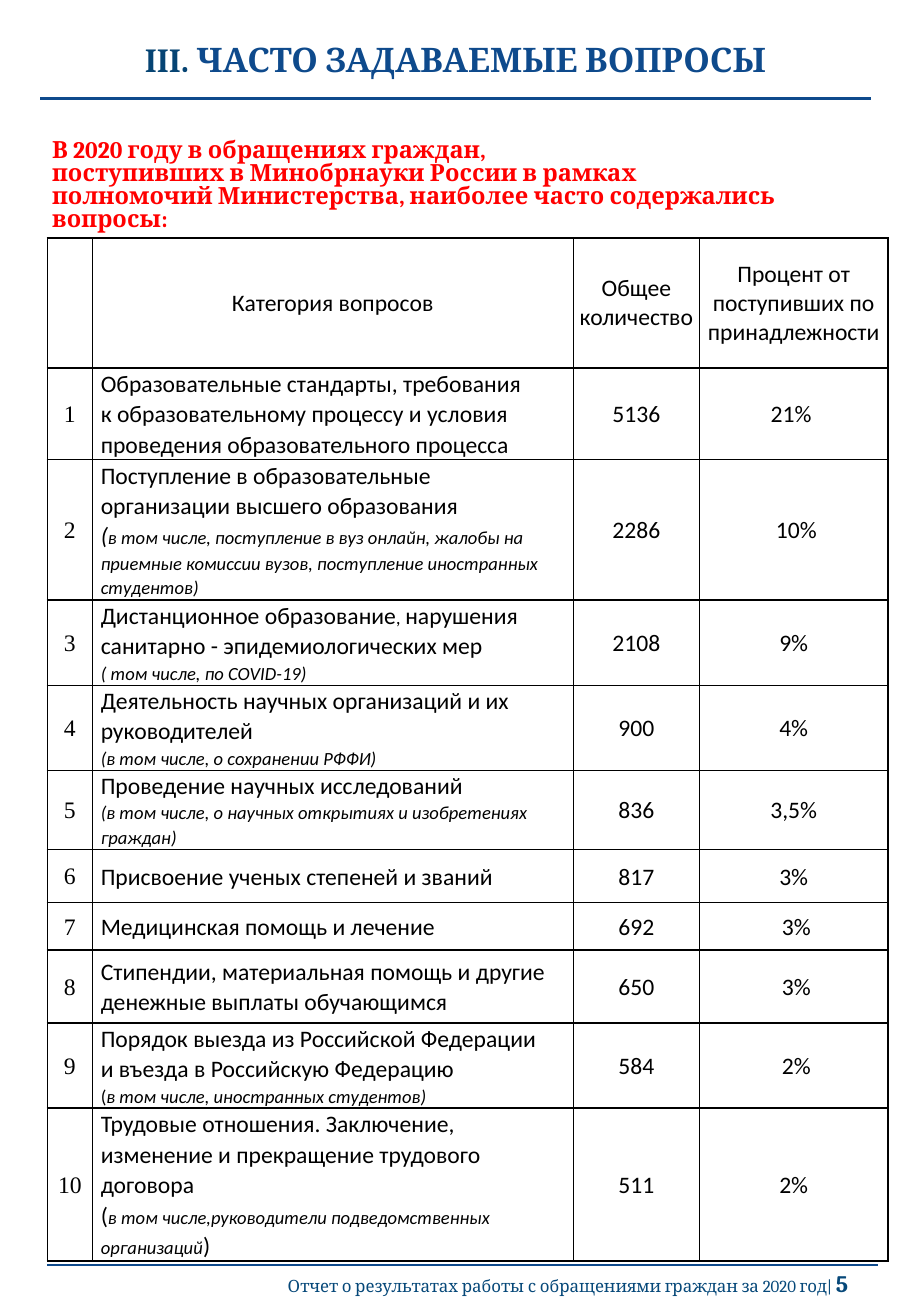
import copy

import pptx
import pptx.util
import pptx.dml.color
import pptx.enum.shapes
import pptx.enum.text
import pptx.oxml
import pptx.oxml.ns

Inches, Pt = pptx.util.Inches, pptx.util.Pt
ALIGN = pptx.enum.text.PP_ALIGN
MIDDLE = pptx.enum.text.MSO_ANCHOR.MIDDLE

BLUE, NAVY, FOOTER_BLUE = "0E4A8C", "064473", "064879"
RED, BLACK = "FF0000", "000000"

BODY = dict(size=14, font="Calibri", color=BLACK)
NUMBER = dict(BODY, font="Times New Roman")
ITALIC = dict(BODY, italic=True)
SMALL = dict(BODY, size=11)
NOTE = dict(SMALL, italic=True)
TITLE = dict(size=20, font="Cambria", bold=True)
INTRO = dict(size=14, font="Cambria", color=RED, bold=True)
FOOTER = dict(font="Cambria", color=FOOTER_BLUE)

# Each text is a list of paragraphs, each paragraph a list of (text, format) runs
TITLE_TEXT = [[("III. ", dict(TITLE, color=NAVY)),
               ("ЧАСТО ЗАДАВАЕМЫЕ ВОПРОСЫ", dict(TITLE, color=BLUE))]]
INTRO_TEXT = [
    [("В 2020 году в обращениях граждан,", INTRO)],
    [("поступивших в Минобрнауки России в рамках полномочий Министерства, "
      "наиболее часто содержались вопросы:", INTRO)],
]
FOOTER_TEXT = [[("Отчет о результатах работы с обращениями граждан за 2020 год| ",
                 dict(FOOTER, size=10)),
                ("5", dict(FOOTER, size=14, bold=True))]]

HEADER = ["", "Категория вопросов", "Общее количество",
          "Процент от поступивших по принадлежности"]
QUESTIONS = [
    ([[("Образовательные стандарты, требования \nк образовательному процессу "
        "и условия проведения образовательного процесса", BODY)]], "5136", "21% "),
    ([[("Поступление в образовательные организации высшего образования", BODY)],
      [("(", ITALIC),
       ("в том числе, поступление в вуз онлайн, жалобы на приемные комиссии вузов, "
        "поступление иностранных студентов)", NOTE)]], "2286", " 10%"),
    ([[("Дистанционное образование", BODY), (", ", NOTE),
       ("нарушения санитарно - эпидемиологических мер \n", BODY),
       ("( том числе, по COVID-19)", NOTE)]], "2108", "9%"),
    ([[("Деятельность научных организаций и их руководителей\n", BODY),
       ("(в том числе, о сохранении РФФИ)", NOTE)]], "900", "4%"),
    ([[("Проведение научных исследований\n", BODY),
       ("(в том числе, о научных открытиях и изобретениях граждан)", NOTE)]],
     "836", "3,5%"),
    ([[("Присвоение ученых степеней и званий", BODY)]], "817", "3%"),
    ([[("Медицинская помощь и лечение", BODY)]], "692", " 3%"),
    ([[("Стипендии, материальная помощь и другие денежные выплаты обучающимся", BODY)]],
     "650", " 3%"),
    ([[("Порядок выезда из Российской Федерации \nи въезда в Российскую Федерацию", BODY)],
      [("(", SMALL), ("в том числе, иностранных студентов)", NOTE)]], "584", " 2%"),
    ([[("Трудовые отношения. Заключение, изменение и прекращение трудового договора", BODY)],
      [("(", BODY), ("в том числе,руководители подведомственных организаций", NOTE),
       (")", BODY)]], "511", "2%"),
]
COL_WIDTHS = [0.37, 3.96, 1.04, 1.55]
ROW_HEIGHTS = [1.07, 0.75, 1.16, 0.7, 0.7, 0.65, 0.44, 0.39, 0.6, 0.7, 1.26]


def rgb(color):
    return pptx.dml.color.RGBColor.from_string(color)


def add_run(p, text, size, font, color, bold=False, italic=False):
    """Add text to a paragraph; line breaks take the format of the run before."""
    for i, part in enumerate(text.split("\n")):
        if i:
            p.add_line_break()
            p._p[-1].append(copy.deepcopy(r._r.rPr))
        if part:
            r = p.add_run()
            r.text = part
            r.font.size, r.font.name = Pt(size), font
            r.font.bold, r.font.italic = bold, italic
            r.font.color.rgb = rgb(color)


def write(tf, paragraphs, align=ALIGN.LEFT, spacing=1.0):
    for i, runs in enumerate(paragraphs):
        p = tf.add_paragraph() if i else tf.paragraphs[0]
        p.alignment, p.line_spacing = align, spacing
        for text, style in runs:
            add_run(p, text, **style)


def add_text(s, box, paragraphs, anchor=pptx.enum.text.MSO_ANCHOR.TOP, **layout):
    tf = s.shapes.add_textbox(*map(Inches, box)).text_frame
    tf.word_wrap, tf.vertical_anchor = True, anchor
    write(tf, paragraphs, **layout)


def add_rule(s, x, y, width):
    line = s.shapes.add_connector(pptx.enum.shapes.MSO_CONNECTOR.STRAIGHT,
                                  *map(Inches, (x, y, x + width, y)))
    line.line.color.rgb, line.line.width = rgb(BLUE), Pt(1.5)
    line._element.spPr.append(pptx.oxml.parse_xml(
        f'<a:effectLst {pptx.oxml.ns.nsdecls("a")}/>'))


def fill_cell(cell, paragraphs, side_margin, **layout):
    """Write a cell with no fill and a thin black border on all sides."""
    cell.fill.background()
    cell.vertical_anchor = MIDDLE
    cell.margin_left = cell.margin_right = Inches(side_margin)
    cell.margin_top = cell.margin_bottom = 0
    for i, side in enumerate("LRTB"):
        cell._tc.tcPr.insert(i, pptx.oxml.parse_xml(
            f'<a:ln{side} {pptx.oxml.ns.nsdecls("a")} w="{Pt(1)}"><a:solidFill>'
            f'<a:srgbClr val="{BLACK}"/></a:solidFill></a:ln{side}>'))
    write(cell.text_frame, paragraphs, **layout)


def add_questions(s, x, y):
    table = s.shapes.add_table(
        len(ROW_HEIGHTS), len(COL_WIDTHS), Inches(x), Inches(y),
        Inches(sum(COL_WIDTHS)), Inches(sum(ROW_HEIGHTS))).table
    table.first_row = table.horz_banding = False
    for column, width in zip(table.columns, COL_WIDTHS):
        column.width = Inches(width)
    for row, height in zip(table.rows, ROW_HEIGHTS):
        row.height = Inches(height)
    for c, text in enumerate(HEADER):
        fill_cell(table.cell(0, c), [[(text, BODY)]], 0.03, align=ALIGN.CENTER)
    for n, (category, count, percent) in enumerate(QUESTIONS, 1):
        fill_cell(table.cell(n, 0), [[(str(n), NUMBER)]], 0.07,
                  align=ALIGN.CENTER, spacing=1.07)
        fill_cell(table.cell(n, 1), category, 0.07, spacing=1.06)
        for c, value in enumerate((count, percent), 2):
            fill_cell(table.cell(n, c), [[(value, BODY)]], 0.07,
                      align=ALIGN.CENTER, spacing=1.06)


def main():
    prs = pptx.Presentation()
    prs.slide_width, prs.slide_height = Inches(7.5), Inches(10.83)
    s = prs.slides.add_slide(prs.slide_layouts[6])
    add_text(s, (0, 0.18, 7.5, 0.66), TITLE_TEXT, MIDDLE, align=ALIGN.CENTER, spacing=0.9)
    add_rule(s, 0.33, 0.81, 6.84)
    add_rule(s, 0.39, 10.41, 6.84)
    add_text(s, (1.59, 10.44, 5.49, 0.29), FOOTER_TEXT, align=ALIGN.RIGHT, spacing=0.8)
    add_text(s, (0.33, 1.11, 6.38, 0.67), INTRO_TEXT, spacing=0.8)
    add_questions(s, 0.39, 1.96)
    prs.save("out.pptx")


if __name__ == "__main__":
    main()
